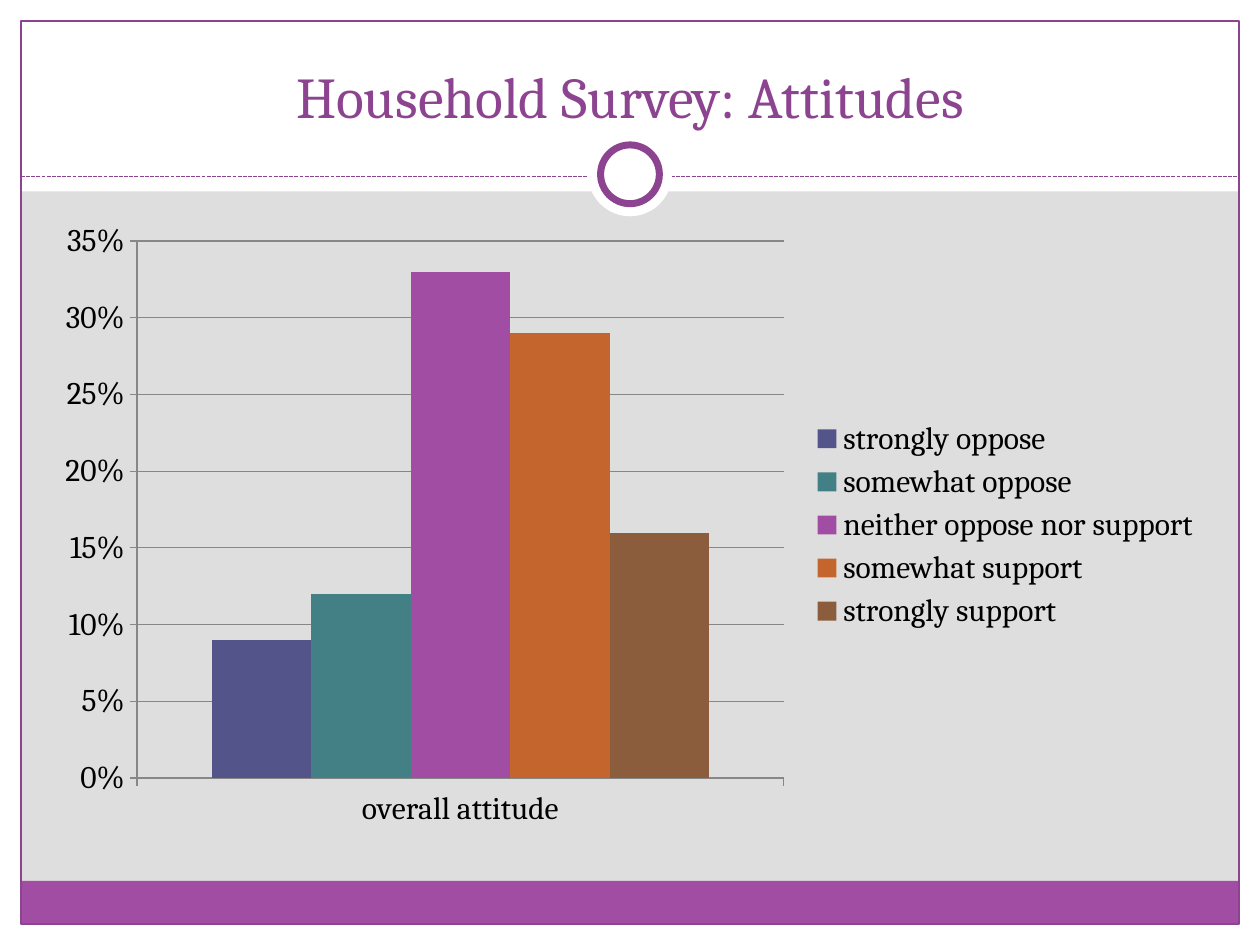
from lxml.etree import SubElement
from pptx import Presentation
from pptx.chart.data import CategoryChartData as ChartData
from pptx.dml.color import RGBColor as RGB
from pptx.enum.chart import XL_CHART_TYPE as Kind, XL_LEGEND_POSITION as Side
from pptx.enum.chart import XL_TICK_MARK as Tick
from pptx.enum.dml import MSO_LINE_DASH_STYLE as Dash
from pptx.enum.shapes import MSO_CONNECTOR as Link, MSO_SHAPE as Form
from pptx.enum.text import MSO_ANCHOR as Anchor, PP_ALIGN as Align
from pptx.oxml.ns import qn
from pptx.util import Inches, Pt

WHITE = RGB(0xFF, 0xFF, 0xFF)
BLACK = RGB(0, 0, 0)
PAPER = RGB(0xDE, 0xDE, 0xDE)
PURPLE = RGB(0xA0, 0x4D, 0xA3)
PLUM = RGB(0x8D, 0x44, 0x90)
GREY = RGB(0x87, 0x87, 0x87)

COLS, ROWS = 60, 45
FONT = "Cambria"

VOTES = [
    ("strongly oppose", 0.09, RGB(0x53, 0x54, 0x8A)),
    ("somewhat oppose", 0.12, RGB(0x43, 0x80, 0x86)),
    ("neither oppose nor support", 0.33, PURPLE),
    ("somewhat support", 0.29, RGB(0xC4, 0x65, 0x2D)),
    ("strongly support", 0.16, RGB(0x8B, 0x5D, 0x3D)),
]


class Deck:
    """Slide style; places are in columns and rows of a 60 by 45 grid."""

    def __init__(self):
        self.show = Presentation()
        self.show.slide_width, self.show.slide_height = Inches(10), Inches(7.5)
        self.slide = self.show.slides.add_slide(self.show.slide_layouts[6])
        back = self.slide.background.fill
        back.solid()
        back.fore_color.rgb = PAPER

    def grid(self, x, y, *size):
        """Turn column and row pairs into slide lengths."""
        wide = self.show.slide_width / COLS
        high = self.show.slide_height / ROWS
        return [int(n * (high if i % 2 else wide))
                for i, n in enumerate((x, y, *size))]

    def shape(self, place, fill=None, line=None, width=0.75, form=Form.RECTANGLE):
        item = self.slide.shapes.add_shape(form, *self.grid(*place))
        item.shadow.inherit = False
        if fill is None:
            item.fill.background()
        else:
            item.fill.solid()
            item.fill.fore_color.rgb = fill
        if line is None:
            item.line.fill.background()
        else:
            item.line.color.rgb = line
            item.line.width = Pt(width)
        return item

    def rule(self, start, end, color):
        item = self.slide.shapes.add_connector(
            Link.STRAIGHT, *self.grid(*start), *self.grid(*end))
        item.line.color.rgb = color
        item.line.width = Pt(0.75)
        item.line.dash_style = Dash.SQUARE_DOT
        SubElement(item._element.spPr, qn("a:effectLst"))
        return item

    def title(self, place, text):
        frame = self.slide.shapes.add_textbox(*self.grid(*place)).text_frame
        frame.word_wrap = True
        frame.vertical_anchor = Anchor.BOTTOM
        para = frame.paragraphs[0]
        para.alignment = Align.CENTER
        run = para.add_run()
        run.text = text
        run.font.name, run.font.size = FONT, Pt(33)
        run.font.color.rgb = PLUM

    def chart(self, place, label, votes):
        data = ChartData(number_format="0%")
        data.categories = [label]
        for name, share, _ in votes:
            data.add_series(name, [share])
        chart = self.slide.shapes.add_chart(
            Kind.COLUMN_CLUSTERED, *self.grid(*place), data).chart
        chart.font.name, chart.font.size = FONT, Pt(18)
        chart.font.color.rgb = BLACK
        chart.has_title = False
        chart.has_legend = True
        chart.legend.position = Side.RIGHT
        chart.legend.include_in_layout = False

        plot = chart.plots[0]
        plot.gap_width, plot.overlap = 150, 0
        plot.vary_by_categories = False
        for bar, (_, _, color) in zip(plot.series, votes):
            bar.format.fill.solid()
            bar.format.fill.fore_color.rgb = color

        scale = chart.value_axis
        scale.minimum_scale, scale.maximum_scale = 0, 0.35
        scale.major_unit = 0.05
        scale.tick_labels.number_format = "0%"
        scale.tick_labels.number_format_is_linked = False
        scale.has_major_gridlines = True
        scale.major_gridlines.format.line.color.rgb = GREY
        for axis in (scale, chart.category_axis):
            axis.major_tick_mark = Tick.OUTSIDE
            axis.format.line.color.rgb = GREY


def main():
    deck = Deck()
    edges = [(0, 44, 60, 1), (0, 0, 60, 9.12), (0, 0, 1, 45), (59, 0, 1, 45)]
    for edge in edges:
        deck.shape(edge, WHITE)
    deck.shape((1, 41.95, 58, 2.05), PURPLE)
    deck.shape((1, 1, 58, 43), line=PLUM)
    deck.rule((1, 8.4), (59, 8.4), PLUM)
    deck.shape((28, 6.3, 4, 4), WHITE, form=Form.OVAL)
    deck.shape((28.6, 6.9, 2.8, 2.8), WHITE, PLUM, 4, Form.OVAL)
    deck.title((2, 1.5, 56, 5), "Household Survey: Attitudes")
    deck.chart((2, 10, 55.8, 30), "overall attitude", VOTES)
    deck.show.save("out.pptx")


if __name__ == "__main__":
    main()
